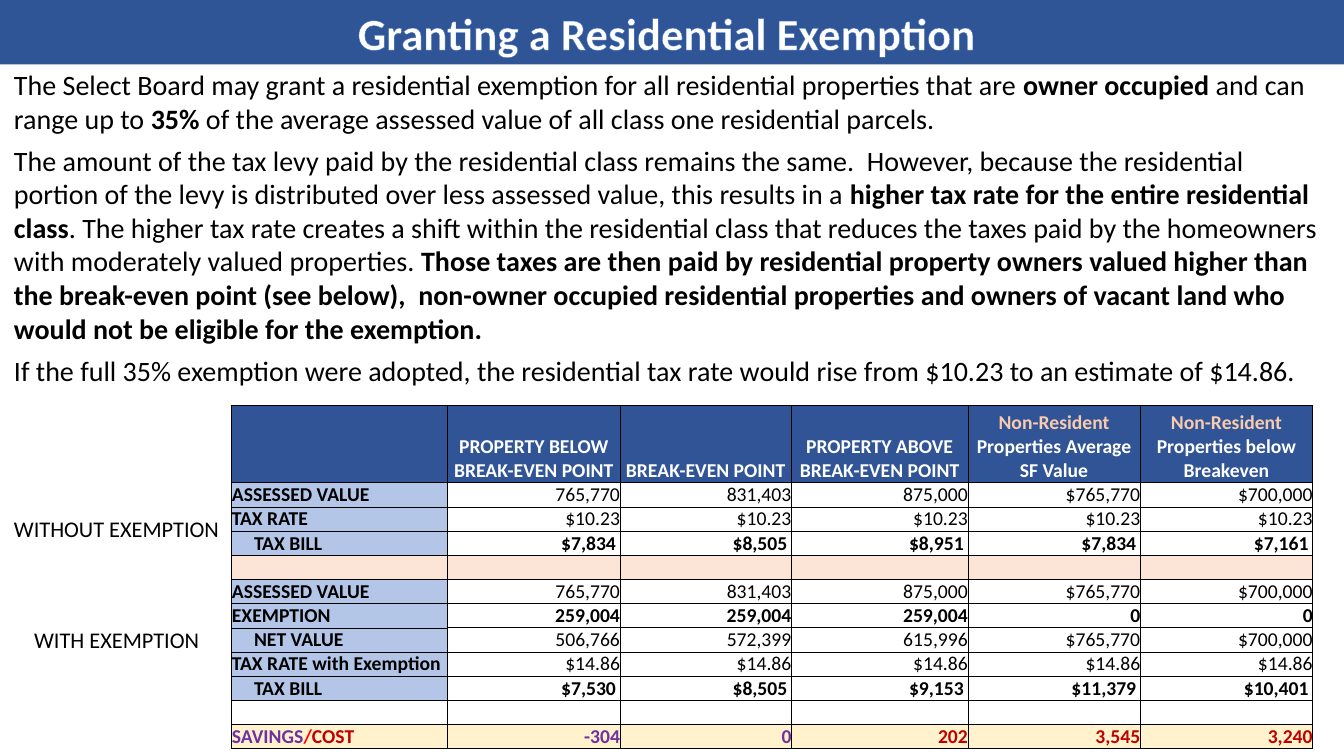
"""Build a slide explaining the residential tax exemption, with a comparison table."""
from lxml.etree import SubElement
from pptx import Presentation
from pptx.dml.color import RGBColor
from pptx.enum.shapes import MSO_SHAPE
from pptx.enum.text import MSO_ANCHOR, MSO_AUTO_SIZE, PP_ALIGN
from pptx.oxml.ns import qn
from pptx.util import Inches, Pt


def color(value):
    return RGBColor.from_string(value)


def add_run(paragraph, text, size, bold=False, text_color="000000"):
    run = paragraph.add_run()
    run.text = text
    run.font.name = "Calibri"
    run.font.size = Pt(size)
    run.font.bold = bold
    run.font.color.rgb = color(text_color)
    return run


presentation = Presentation()
presentation.slide_width = Inches(13.33)
presentation.slide_height = Inches(7.5)
slide = presentation.slides.add_slide(presentation.slide_layouts[6])

banner = slide.shapes.add_shape(MSO_SHAPE.RECTANGLE, 0, 0, Inches(13.33), Inches(0.64))
banner.shadow.inherit = False
banner.fill.solid()
banner.fill.fore_color.rgb = color("2F5597")
banner.line.fill.background()
banner.text_frame.word_wrap = True
banner.text_frame.auto_size = MSO_AUTO_SIZE.SHAPE_TO_FIT_TEXT
title = banner.text_frame.paragraphs[0]
title.alignment = PP_ALIGN.CENTER
title_run = add_run(title, "Granting a Residential Exemption ", 32, True, "FFFFFF")
title_properties = title_run.font._element
outline = SubElement(title_properties, qn("a:ln"), w=str(Pt(0.8)))
outline_fill = SubElement(outline, qn("a:solidFill"))
SubElement(outline_fill, qn("a:srgbClr"), val="4472C4")
title_properties.insert(0, outline)

explanation = [
    [("The Select Board may grant a residential exemption for all residential properties that are ", False),
     ("owner occupied ", True),
     ("and can range up to ", False),
     ("35%", True),
     (" of the average assessed value of all class one residential parcels.", False)],
    [("The amount of the tax levy paid by the residential class remains the same.  However, because the "
      "residential portion of the levy is distributed over less assessed value, this results in a ", False),
     ("higher tax rate for the entire residential class", True),
     (". The higher tax rate creates a shift within the residential class that reduces the taxes paid by "
      "the homeowners with moderately valued properties. ", False),
     ("Those taxes are then paid by residential property owners valued higher than the break-even point "
      "(see below),  non-owner occupied residential properties and owners of vacant land who would not be "
      "eligible for the exemption.", True)],
    [("If the full 35% exemption were adopted, the residential tax rate would rise from $10.23 to an "
      "estimate of $14.86.", False)],
]
body = slide.shapes.add_textbox(Inches(0.04), Inches(0.62), Inches(13.29), Inches(3.3))
body.text_frame.word_wrap = True
body.text_frame.auto_size = MSO_AUTO_SIZE.SHAPE_TO_FIT_TEXT
for index, runs in enumerate(explanation):
    paragraph = body.text_frame.add_paragraph() if index else body.text_frame.paragraphs[0]
    paragraph.space_before = Pt(6 if index else 0)
    for text, bold in runs:
        add_run(paragraph, text, 20, bold)

for text, left, top, width in [("WITHOUT EXEMPTION", 0.04, 5.06, 2.26), ("WITH EXEMPTION", 0.24, 6.16, 1.86)]:
    label = slide.shapes.add_textbox(Inches(left), Inches(top), Inches(width), Inches(0.37))
    label.text_frame.word_wrap = False
    label.text_frame.auto_size = MSO_AUTO_SIZE.SHAPE_TO_FIT_TEXT
    add_run(label.text_frame.paragraphs[0], text, 16)

WHITE, PEACH, PURPLE, RED = "FFFFFF", "F8CBAD", "7030A0", "C00000"
rows = [
    ["", "PROPERTY BELOW BREAK-EVEN POINT", "BREAK-EVEN POINT", "PROPERTY ABOVE BREAK-EVEN POINT",
     [("Non-Resident ", PEACH), ("Properties Average SF Value", WHITE)],
     [("Non-Resident", PEACH), (" Properties below Breakeven", WHITE)]],
    ["ASSESSED VALUE", "765,770", "831,403", "875,000", "$765,770", "$700,000"],
    ["TAX RATE"] + ["$10.23"] * 5,
    ["TAX BILL", "$7,834", "$8,505", "$8,951", "$7,834", "$7,161"],
    [""] * 6,
    ["ASSESSED VALUE", "765,770", "831,403", "875,000", "$765,770", "$700,000"],
    ["EXEMPTION", "259,004", "259,004", "259,004", "0", "0"],
    ["NET VALUE", "506,766", "572,399", "615,996", "$765,770", "$700,000"],
    ["TAX RATE with Exemption"] + ["$14.86"] * 5,
    ["TAX BILL", "$7,530", "$8,505", "$9,153", "$11,379", "$10,401"],
    [""] * 6,
    [[("SAVINGS", PURPLE), ("/", "FF0000"), ("COST", RED)], [("-304", PURPLE)], [("0", PURPLE)],
     [("202", RED)], [("3,545", RED)], [("3,240", RED)]],
]
row_fills = {0: "305496", 4: "FCE4D6", 10: None, 11: "FFF2CC"}
bold_rows = {0, 3, 6, 9, 11}
heavy_below = {2, 4, 6, 8}
column_widths = [2.14, 1.71, 1.7, 1.75, 1.71, 1.71]

table_frame = slide.shapes.add_table(len(rows), 6, Inches(2.3), Inches(4.02), Inches(10.72), Inches(3.41))
table = table_frame.table
table.first_row = False
table.horz_banding = False
for column, width in zip(table.columns, column_widths):
    column.width = Inches(width)

for row_index, values in enumerate(rows):
    table.rows[row_index].height = Inches(0.24 if row_index else 0.77)
    for column_index, content in enumerate(values):
        cell = table.cell(row_index, column_index)
        is_label = column_index == 0
        cell.vertical_anchor = MSO_ANCHOR.BOTTOM
        cell.margin_left = cell.margin_right = cell.margin_top = cell.margin_bottom = 0
        if content in ("TAX BILL", "NET VALUE"):
            cell.margin_left = Inches(0.22)
        if values[0] == "TAX BILL" and not is_label:
            cell.margin_right = Inches(0.04)

        paragraph = cell.text_frame.paragraphs[0]
        if row_index == 0:
            paragraph.alignment = PP_ALIGN.CENTER
        else:
            paragraph.alignment = PP_ALIGN.LEFT if is_label else PP_ALIGN.RIGHT
        if not content:
            SubElement(paragraph._p, qn("a:endParaRPr"), sz="1400")
        elif isinstance(content, str):
            content = [(content, "000000" if row_index else WHITE)]
        for text, text_color in content:
            add_run(paragraph, text, 14, is_label or row_index in bold_rows, text_color)

        fill = row_fills.get(row_index, "B4C6E7" if is_label else None)
        if fill:
            cell.fill.solid()
            cell.fill.fore_color.rgb = color(fill)
        else:
            cell.fill.background()

        heavy_edges = {
            "a:lnL": is_label,
            "a:lnR": column_index == 5,
            "a:lnT": row_index == 0 or row_index - 1 in heavy_below and (not is_label or row_index == 5),
            "a:lnB": row_index in heavy_below and (not is_label or row_index == 4),
        }
        cell_properties = cell._tc.get_or_add_tcPr()
        for position, (edge, heavy) in enumerate(heavy_edges.items()):
            border = SubElement(cell_properties, qn(edge), w=str(Pt(1 if heavy else 0.5)))
            border_fill = SubElement(border, qn("a:solidFill"))
            SubElement(border_fill, qn("a:srgbClr"), val="000000")
            cell_properties.insert(position, border)

presentation.save("out.pptx")
